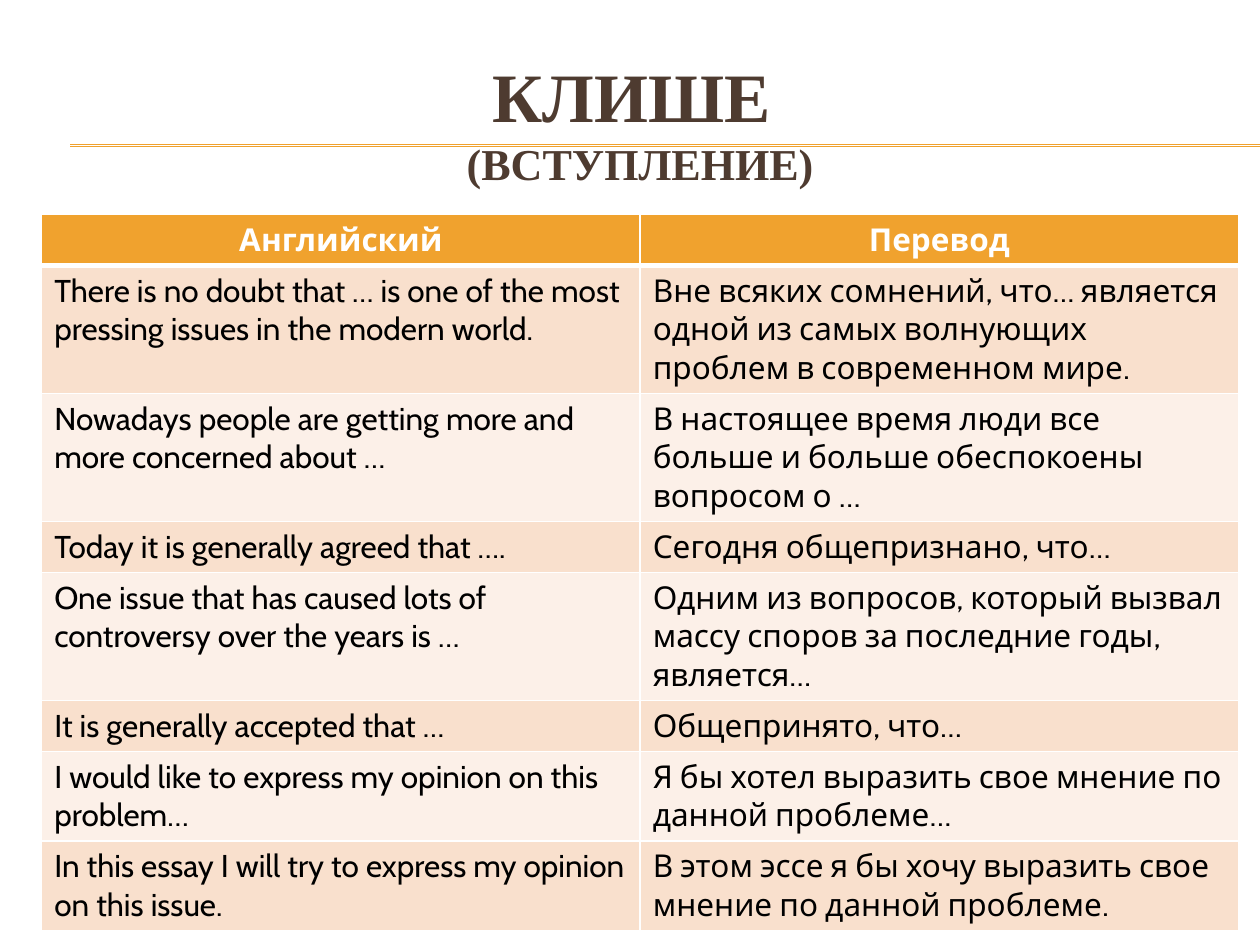
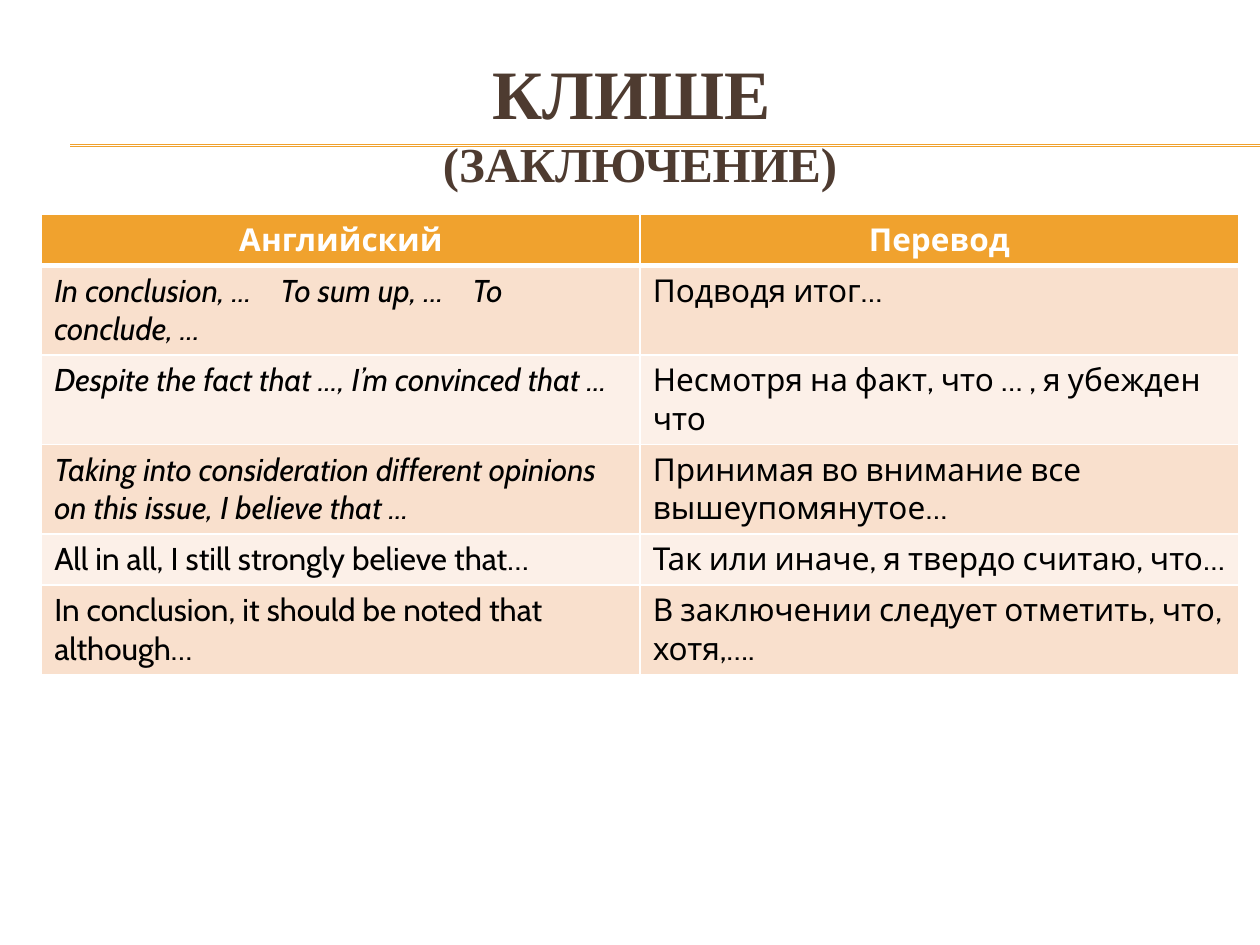
from lxml.etree import SubElement
from pptx import Presentation
from pptx.dml.color import RGBColor
from pptx.enum.shapes import MSO_CONNECTOR
from pptx.enum.text import MSO_ANCHOR, MSO_AUTO_SIZE, PP_ALIGN
from pptx.oxml.ns import qn
from pptx.util import Cm, Pt

COLORS = {
    "accent": "F0A22E",
    "title": "4E3B30",
    "header_text": "FFFFFF",
    "text": "000000",
    "border": "FFFFFF",
    "odd_row": "F9E0CD",
    "even_row": "FCF0E8",
}
TITLE_FONT = "Times New Roman"
TABLE_FONT = "Cabin"
TITLE_ONLY = 5
LEFT, WIDTH = Cm(0.84), Cm(24.13)
ROW_HEIGHT = Cm(1.03)
HEADER = ("Английский", "Перевод")
TAB_STOPS = (Cm(4.56), Cm(8.43))

# Each row: English phrase, translation, whether the English is italic
INTRODUCTION = [
    ("There is no doubt that … is one of the most pressing issues in the modern world.",
     "Вне всяких сомнений, что… является одной из самых волнующих проблем в современном мире.",
     False),
    ("Nowadays people are getting more and more concerned about …",
     "В настоящее время люди все больше и больше обеспокоены вопросом о …", False),
    ("Today it is generally agreed that ….", "Сегодня общепризнано, что…", False),
    ("One issue that has caused lots of controversy over the years is …",
     "Одним из вопросов, который вызвал массу споров за последние годы, является…", False),
    ("It is generally accepted that …", "Общепринято, что…", False),
    ("I would like to express my opinion on this problem…",
     "Я бы хотел выразить свое мнение по данной проблеме…", False),
    ("In this essay I will try to express my opinion on this issue.",
     "В этом эссе я бы хочу выразить свое мнение по данной проблеме.", False),
]
CONCLUSION = [
    ("In conclusion, ...\tTo sum up, ...\tTo conclude, ...", "Подводя итог…", True),
    ("Despite the fact that ..., I’m convinced that ...",
     "Несмотря на факт, что … , я убежден что", True),
    ("Taking into consideration different opinions on this issue, I believe that ...",
     "Принимая во внимание все вышеупомянутое…", True),
    ("All in all, I still strongly believe that…",
     "Так или иначе, я твердо считаю, что…", False),
    ("In conclusion, it should be noted that although…",
     "В заключении следует отметить, что, хотя,….", False),
]


def rgb(name):
    """Return the named colour."""
    return RGBColor.from_string(COLORS[name])


def add_run(paragraph, text, size, font, color, bold=False, italic=False):
    """Add one formatted run."""
    run = paragraph.add_run()
    run.text = text
    run.font.size = Pt(size)
    run.font.name = font
    run.font.color.rgb = rgb(color)
    run.font.bold = bold
    run.font.italic = italic


def add_rules(slide):
    """Draw the double rule behind the title."""
    for y in (Cm(2.92), Cm(2.95)):
        rule = slide.shapes.add_connector(MSO_CONNECTOR.STRAIGHT, Cm(1.42), y, Cm(25.4), y)
        rule.line.color.rgb = rgb("accent")
        rule.line.width = Pt(0.75)
        SubElement(rule._element.spPr, qn("a:effectLst"))
        slide.shapes._spTree.insert(2, rule._element)


def set_title(slide, subtitle, subtitle_size):
    """Place the title and fill its two lines."""
    title = slide.shapes.title
    title.left, title.top, title.width, title.height = LEFT, Cm(1.27), WIDTH, Cm(2.34)
    frame = title.text_frame
    frame.auto_size = MSO_AUTO_SIZE.NONE
    frame.word_wrap = True
    frame.vertical_anchor = MSO_ANCHOR.MIDDLE
    paragraph = frame.paragraphs[0]
    paragraph.alignment = PP_ALIGN.CENTER
    add_run(paragraph, "КЛИШЕ ", 39.6, TITLE_FONT, "title", bold=True)
    paragraph.add_line_break()
    add_run(paragraph, subtitle, subtitle_size, TITLE_FONT, "title", bold=True)


def set_borders(cell, bottom):
    """Draw 1 pt borders, with a bottom border of the given width."""
    properties = cell._tc.get_or_add_tcPr()
    widths = {"a:lnL": 1, "a:lnR": 1, "a:lnT": 1, "a:lnB": bottom}
    for position, (tag, width) in enumerate(widths.items()):
        line = SubElement(properties, qn(tag), w=str(Pt(width)))
        fill = SubElement(line, qn("a:solidFill"))
        SubElement(fill, qn("a:srgbClr"), val=COLORS["border"])
        properties.insert(position, line)


def add_tab_stops(paragraph):
    """Set the left tab stops of a paragraph."""
    tabs = SubElement(paragraph._p.get_or_add_pPr(), qn("a:tabLst"))
    for stop in TAB_STOPS:
        SubElement(tabs, qn("a:tab"), pos=str(stop), algn="l")


def fill_cell(cell, text, fill, header=False, italic=False):
    """Write and format one table cell."""
    cell.fill.solid()
    cell.fill.fore_color.rgb = rgb(fill)
    paragraph = cell.text_frame.paragraphs[0]
    paragraph.alignment = PP_ALIGN.CENTER if header else PP_ALIGN.LEFT
    if "\t" in text:
        add_tab_stops(paragraph)
    color = "header_text" if header else "text"
    add_run(paragraph, text, 18, TABLE_FONT, color, bold=header, italic=italic)
    set_borders(cell, bottom=3 if header else 1)


def add_phrase_table(slide, phrases, height):
    """Add the two-column table of phrases and translations."""
    count = len(phrases) + 1
    shape = slide.shapes.add_table(count, 2, LEFT, Cm(4.32), WIDTH, ROW_HEIGHT * count)
    table = shape.table
    for column, text in enumerate(HEADER):
        fill_cell(table.cell(0, column), text, "accent", header=True)
    for row, (english, russian, italic) in enumerate(phrases, start=1):
        fill = "odd_row" if row % 2 else "even_row"
        fill_cell(table.cell(row, 0), english, fill, italic=italic)
        fill_cell(table.cell(row, 1), russian, fill)
    shape.height = height


def add_phrase_slide(presentation, subtitle, subtitle_size, phrases, table_height):
    """Add one slide of set phrases."""
    slide = presentation.slides.add_slide(presentation.slide_layouts[TITLE_ONLY])
    add_rules(slide)
    set_title(slide, subtitle, subtitle_size)
    add_phrase_table(slide, phrases, table_height)


def main():
    """Build and save the presentation."""
    presentation = Presentation()
    presentation.slide_width, presentation.slide_height = Cm(25.4), Cm(19.05)
    add_phrase_slide(presentation, "(ВСТУПЛЕНИЕ)", 25.2, INTRODUCTION, Cm(14.27))
    add_phrase_slide(presentation, "(ЗАКЛЮЧЕНИЕ)", 27.9, CONCLUSION, Cm(9.17))
    presentation.save("out.pptx")


main()
